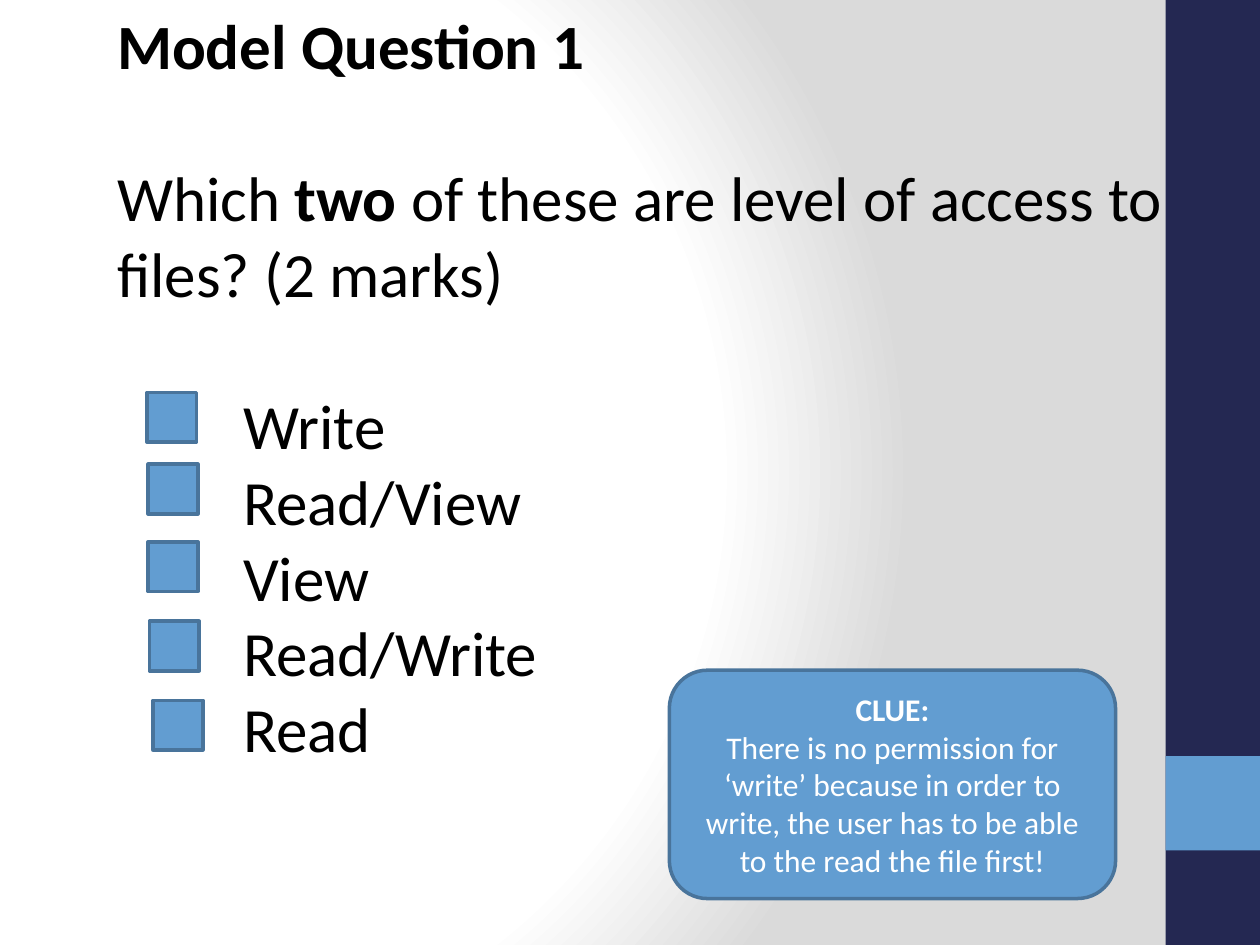
from pptx import Presentation
from pptx.dml.color import RGBColor
from pptx.enum.shapes import MSO_SHAPE as SHAPE
from pptx.enum.text import MSO_ANCHOR as ANCHOR, PP_ALIGN as ALIGN
from pptx.oxml import parse_xml
from pptx.oxml.ns import nsdecls
from pptx.util import Pt

# Content: each paragraph is a list of (text, bold) runs
TITLE = [("Model Question 1", True)]
QUESTION = [("Which ", False), ("two", True),
            (" of these are level of access to files? (2 marks)", False)]
OPTIONS = ["Write", "Read/View", "View", "Read/Write", "Read"]
CLUE = [
    [("CLUE:", True)],
    [("There is no permission for ‘write’ because in order to write, "
      "the user has to be able to the read the file first!", False)],
]

# Layout and format values, in points
WIDTH, HEIGHT = 720, 540
BAND_W = 54
BLANK_LINE = 44
BOX = 28.4
TICK_BOXES = [(84, 224.3), (84.7, 265.3), (84.7, 309.6), (85.4, 355), (87.5, 400.2)]
NAVY, BLUE, EDGE = "242852", "629DD1", "49749B"
STOPS = [(0, "FFFFFF"), (75, "FFFFFF"), (100, "DADADA")]
BODY = {"name": "Calibri", "size": Pt(36)}
NOTE = {"name": "Calibri", "size": Pt(18)}


def rgb(value):
    return RGBColor.from_string(value)


def add_box(s, kind, x, y, w, h, fill, line=None):
    sp = s.shapes.add_shape(kind, Pt(x), Pt(y), Pt(w), Pt(h))
    sp.shadow.inherit = False
    sp.fill.solid()
    sp.fill.fore_color.rgb = rgb(fill)
    if line:
        sp.line.color.rgb = rgb(line)
        sp.line.width = Pt(2)
    else:
        sp.line.fill.background()
    return sp


def write(tf, paragraphs, font, color, **layout):
    tf.word_wrap = True
    for i, runs in enumerate(paragraphs):
        p = tf.paragraphs[0] if i == 0 else tf.add_paragraph()
        for name, value in layout.items():
            setattr(p, name, value)
        for text, bold in runs:
            r = p.add_run()
            r.text = text
            for name, value in {**font, "bold": bold}.items():
                setattr(r.font, name, value)
            r.font.color.rgb = rgb(color)


def set_background(s):
    stops = "".join(f'<a:gs pos="{pos * 1000}"><a:srgbClr val="{color}"/></a:gs>'
                    for pos, color in STOPS)
    s.element.cSld.insert(0, parse_xml(
        f'<p:bg {nsdecls("p", "a")}><p:bgPr><a:gradFill rotWithShape="1">'
        f'<a:gsLst>{stops}</a:gsLst><a:path path="circle">'
        '<a:fillToRect l="20000" t="50000" r="100000" b="50000"/></a:path>'
        '</a:gradFill><a:effectLst/></p:bgPr></p:bg>'))


def main():
    prs = Presentation()
    prs.slide_width, prs.slide_height = Pt(WIDTH), Pt(HEIGHT)
    s = prs.slides.add_slide(prs.slide_layouts[6])
    set_background(s)

    # Side band with its accent square
    band_x = WIDTH - BAND_W
    add_box(s, SHAPE.RECTANGLE, band_x, 0, BAND_W, HEIGHT, NAVY)
    add_box(s, SHAPE.RECTANGLE, band_x, 432, BAND_W, BAND_W, BLUE)

    # Question and indented options
    tf = s.shapes.add_textbox(Pt(59.8), Pt(0), Pt(620.6), Pt(530.6)).text_frame
    options = [[(text, False)] for text in OPTIONS]
    write(tf, [TITLE, QUESTION, *options], BODY, "000000")
    for p in tf.paragraphs[2:]:
        p._p.get_or_add_pPr().set("marL", str(Pt(72)))
    for p in tf.paragraphs[1:3]:
        p.space_before = Pt(BLANK_LINE)

    # Clue
    clue = add_box(s, SHAPE.ROUNDED_RECTANGLE, 382.5, 383, 255, 130.5, BLUE, EDGE)
    clue.text_frame.vertical_anchor = ANCHOR.MIDDLE
    write(clue.text_frame, CLUE, NOTE, "FFFFFF", alignment=ALIGN.CENTER)

    # Tick boxes
    for x, y in TICK_BOXES:
        add_box(s, SHAPE.RECTANGLE, x, y, BOX, BOX, BLUE, EDGE)

    prs.save("out.pptx")


if __name__ == "__main__":
    main()
